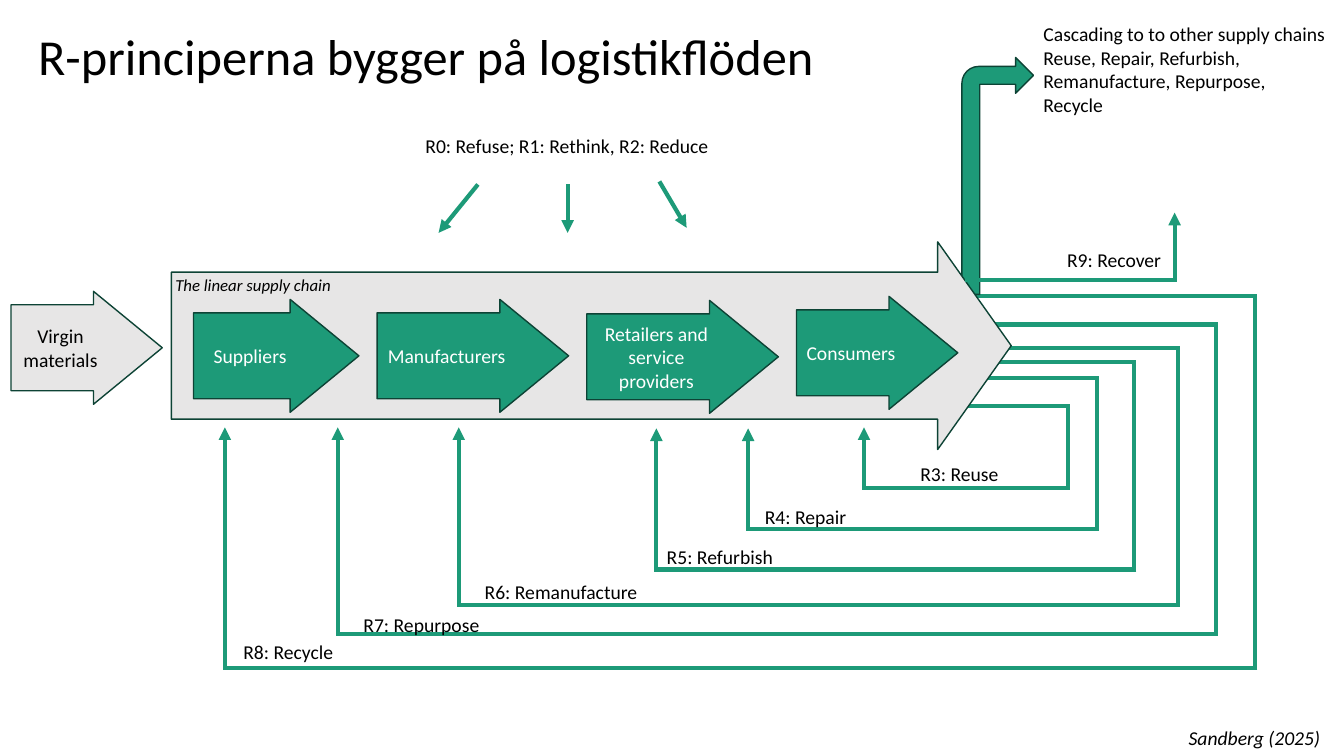
from dataclasses import dataclass

from lxml.etree import SubElement
from pptx import Presentation
from pptx.dml.color import RGBColor
from pptx.enum.shapes import MSO_CONNECTOR as Connector, MSO_SHAPE as Shape
from pptx.enum.text import MSO_ANCHOR as Anchor, MSO_AUTO_SIZE as AutoSize, PP_ALIGN as Align
from pptx.oxml.ns import qn
from pptx.util import Pt

PX = 9144
HALF_LINE = 2
FONT = "Calibri"
GREEN = RGBColor(0x1D, 0x9A, 0x78)
DARK_GREEN = RGBColor(0x0D, 0x43, 0x35)
GREY = RGBColor(0xE7, 0xE6, 0xE6)
WHITE = RGBColor(0xFF, 0xFF, 0xFF)
BLACK = RGBColor(0x00, 0x00, 0x00)
STAGE_ADJUST = (0.761, 0.609)


@dataclass(frozen=True)
class BlockArrow:
    left: int
    top: int
    width: int
    height: int
    text: str = ""
    fill: RGBColor = GREEN
    ink: RGBColor = WHITE
    kind: Shape = Shape.RIGHT_ARROW
    adjust: tuple[float, ...] = STAGE_ADJUST


@dataclass(frozen=True)
class Label:
    left: int
    top: int
    width: int
    height: int
    text: str
    align: Align = Align.CENTER
    size: int = 14
    italic: bool = False


@dataclass(frozen=True)
class Segment:
    x1: int
    y1: int
    x2: int
    y2: int
    arrow: bool = False


@dataclass(frozen=True)
class ReturnLoop:
    start: int
    top: int
    right: int
    bottom: int
    left: int
    tip: int

    def segments(self) -> list[Segment]:
        return [
            Segment(self.start, self.top, self.right + HALF_LINE, self.top),
            Segment(self.right, self.top, self.right, self.bottom),
            Segment(self.right + HALF_LINE, self.bottom, self.left - HALF_LINE, self.bottom),
            Segment(self.left, self.bottom, self.left, self.tip, arrow=True),
        ]


LOOPS = [
    ReturnLoop(954, 403, 1059, 484, 857, 424),
    ReturnLoop(971, 375, 1088, 525, 742, 425),
    ReturnLoop(983, 359, 1125, 565, 651, 425),
    ReturnLoop(989, 345, 1168, 600, 455, 424),
    ReturnLoop(983, 322, 1206, 629, 335, 424),
    ReturnLoop(957, 294, 1245, 663, 223, 424),
]
BLOCK_ARROWS = [
    BlockArrow(954, 57, 71, 235, kind=Shape.BENT_ARROW, adjust=(0.25, 0.25, 0.25, 0.235)),
    BlockArrow(170, 240, 833, 206, fill=GREY, adjust=(0.708, 0.354)),
    BlockArrow(11, 289, 150, 112, "Virgin materials", GREY, BLACK),
    BlockArrow(192, 297, 164, 112, "Suppliers"),
    BlockArrow(374, 297, 190, 112, "Manufacturers"),
    BlockArrow(582, 298, 190, 112, "Retailers and service providers"),
    BlockArrow(790, 294, 160, 112, "Consumers"),
]
FRONT_SEGMENTS = [
    Segment(474, 183, 435, 231, arrow=True),
    Segment(563, 183, 563, 231, arrow=True),
    Segment(654, 180, 681, 226, arrow=True),
    Segment(957, 278, 1165 + HALF_LINE, 278),
    Segment(1165, 278, 1165, 211, arrow=True),
]
LABELS = [
    Label(28, 20, 871, 71, "R-principerna bygger på logistikflöden", Align.JUSTIFY, 36),
    Label(1025, 17, 301, 104,
          "Cascading to to other supply chains\n"
          "Reuse, Repair, Refurbish, Remanufacture, Repurpose, Recycle", Align.LEFT),
    Label(164, 268, 189, 30, "The linear supply chain", Align.LEFT, 12, italic=True),
    Label(356, 128, 413, 34, "R0: Refuse; R1: Rethink, R2: Reduce"),
    Label(899, 453, 105, 34, "R3: Reuse"),
    Label(748, 496, 102, 34, "R4: Repair"),
    Label(647, 536, 134, 34, "R5: Refurbish"),
    Label(469, 570, 175, 34, "R6: Remanufacture"),
    Label(347, 603, 142, 34, "R7: Repurpose"),
    Label(226, 630, 120, 34, "R8: Recycle"),
    Label(1045, 241, 120, 34, "R9: Recover"),
    Label(1169, 715, 164, 34, "Sandberg (2025)", Align.LEFT, italic=True),
]


def write_text(frame, text: str, align: Align, size: int, ink: RGBColor, italic: bool = False) -> None:
    frame.word_wrap = True
    frame.text = text
    for para in frame.paragraphs:
        para.alignment = align
        para.font.name = FONT
        para.font.size = Pt(size)
        para.font.italic = italic
        para.font.color.rgb = ink


def draw_segment(page, segment: Segment) -> None:
    ends = (segment.x1, segment.y1, segment.x2, segment.y2)
    connector = page.shapes.add_connector(Connector.STRAIGHT, *(PX * end for end in ends))
    connector.line.color.rgb = GREEN
    connector.line.width = Pt(3)
    if segment.arrow:
        SubElement(connector.line._get_or_add_ln(), qn("a:tailEnd"), type="triangle")
    SubElement(connector._element.spPr, qn("a:effectLst"))


def draw_block_arrow(page, arrow: BlockArrow) -> None:
    bounds = (arrow.left, arrow.top, arrow.width, arrow.height)
    shape = page.shapes.add_shape(arrow.kind, *(PX * length for length in bounds))
    for index, value in enumerate(arrow.adjust):
        shape.adjustments[index] = value
    shape.shadow.inherit = False
    shape.fill.solid()
    shape.fill.fore_color.rgb = arrow.fill
    shape.line.color.rgb = DARK_GREEN
    shape.line.width = Pt(1)
    if arrow.text:
        shape.text_frame.vertical_anchor = Anchor.MIDDLE
        write_text(shape.text_frame, arrow.text, Align.CENTER, 14, arrow.ink)


def draw_label(page, label: Label) -> None:
    bounds = (label.left, label.top, label.width, label.height)
    box = page.shapes.add_textbox(*(PX * length for length in bounds))
    box.text_frame.auto_size = AutoSize.SHAPE_TO_FIT_TEXT
    write_text(box.text_frame, label.text, label.align, label.size, BLACK, label.italic)


def main() -> None:
    deck = Presentation()
    deck.slide_width = 1333 * PX
    deck.slide_height = 750 * PX
    page = deck.slides.add_slide(deck.slide_layouts[6])
    for loop in LOOPS:
        for segment in loop.segments():
            draw_segment(page, segment)
    for arrow in BLOCK_ARROWS:
        draw_block_arrow(page, arrow)
    for segment in FRONT_SEGMENTS:
        draw_segment(page, segment)
    for label in LABELS:
        draw_label(page, label)
    deck.save("out.pptx")


if __name__ == "__main__":
    main()
